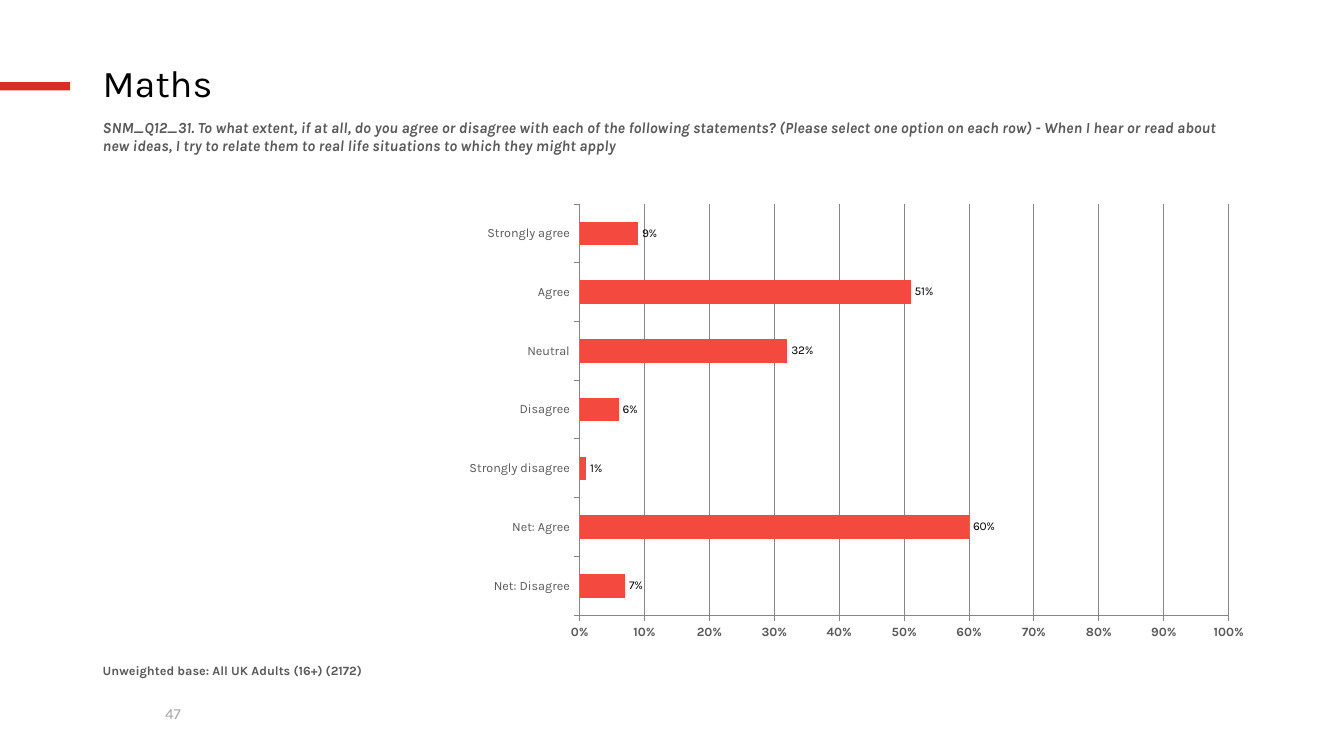
from dataclasses import dataclass

from lxml.etree import SubElement
from pptx import Presentation
from pptx.chart.data import CategoryChartData
from pptx.dml.color import RGBColor
from pptx.enum.chart import XL_CHART_TYPE, XL_LABEL_POSITION, XL_TICK_LABEL_POSITION, XL_TICK_MARK
from pptx.enum.shapes import MSO_SHAPE
from pptx.enum.text import MSO_ANCHOR
from pptx.oxml.ns import qn
from pptx.util import Cm, Pt


@dataclass(frozen=True)
class Theme:
    font: str = "Karla"
    black: str = "000000"
    grey: str = "595959"
    pale: str = "A6A6A6"
    grid: str = "868686"
    accent: str = "DA2C2D"
    bar: str = "F3493E"
    title: float = 27
    body: float = 11
    small: float = 9
    label: float = 8.5


THEME = Theme()
LEFT, WIDTH = 2.34, 29.21
ANSWERS = [
    ("Net: Disagree", 0.07),
    ("Net: Agree", 0.6),
    ("Strongly disagree", 0.01),
    ("Disagree", 0.06),
    ("Neutral", 0.32),
    ("Agree", 0.51),
    ("Strongly agree", 0.09),
]


def style_font(font, size, color, bold=False, italic=False):
    font.name = THEME.font
    font.size = Pt(size)
    font.bold = bold
    font.italic = italic
    font.color.rgb = RGBColor.from_string(color)


def add_text(s, text, x, y, w, h, size, color, bold=False, italic=False,
             anchor=MSO_ANCHOR.TOP, spacing=1.0):
    tf = s.shapes.add_textbox(Cm(x), Cm(y), Cm(w), Cm(h)).text_frame
    tf.word_wrap = True
    tf.vertical_anchor = anchor
    p = tf.paragraphs[0]
    p.text = text
    p.line_spacing = spacing
    style_font(p.font, size, color, bold, italic)


def add_accent_bar(s, x, y, w, h):
    sp = s.shapes.add_shape(MSO_SHAPE.RECTANGLE, Cm(x), Cm(y), Cm(w), Cm(h))
    sp.shadow.inherit = False
    sp.fill.solid()
    sp.fill.fore_color.rgb = RGBColor.from_string(THEME.accent)
    sp.line.fill.background()


def style_axis(axis, bold=False):
    axis.tick_label_position = XL_TICK_LABEL_POSITION.LOW
    axis.major_tick_mark = XL_TICK_MARK.OUTSIDE
    axis.minor_tick_mark = XL_TICK_MARK.NONE
    axis.format.line.color.rgb = RGBColor.from_string(THEME.grid)
    axis.format.line.width = Pt(0.75)
    style_font(axis.tick_labels.font, THEME.small, THEME.grey, bold)


def place_plot(chart, x, y, w, h):
    plot_area = chart.plots[0]._element.getparent()
    for old in plot_area.findall(qn("c:layout")):
        plot_area.remove(old)
    layout = SubElement(plot_area, qn("c:layout"))
    plot_area.insert(0, layout)
    manual = SubElement(layout, qn("c:manualLayout"))
    settings = [("layoutTarget", "inner"), ("xMode", "edge"), ("yMode", "edge"),
                ("x", x), ("y", y), ("w", w), ("h", h)]
    for name, value in settings:
        SubElement(manual, qn(f"c:{name}")).set("val", str(value))


def add_answer_chart(s, x, y, w, h):
    data = CategoryChartData(number_format="0%")
    data.categories = [answer for answer, _ in ANSWERS]
    data.add_series("Series 1", [share for _, share in ANSWERS])
    chart = s.shapes.add_chart(
        XL_CHART_TYPE.BAR_CLUSTERED, Cm(x), Cm(y), Cm(w), Cm(h), data).chart
    chart.has_legend = False
    chart.has_title = False
    style_font(chart.font, 18, THEME.black)

    style_axis(chart.category_axis)
    chart.category_axis.has_major_gridlines = False
    axis = chart.value_axis
    style_axis(axis, bold=True)
    axis.minimum_scale, axis.maximum_scale, axis.major_unit = 0, 1, 0.1
    axis.tick_labels.number_format = "0%"
    axis.tick_labels.number_format_is_linked = False
    axis.has_major_gridlines = True
    line = axis.major_gridlines.format.line
    line.color.rgb = RGBColor.from_string(THEME.grid)
    line.width = Pt(0.75)

    plot = chart.plots[0]
    plot.vary_by_categories = False
    plot.gap_width, plot.overlap = 150, -10
    series = plot.series[0]
    series.invert_if_negative = False
    series.format.fill.solid()
    series.format.fill.fore_color.rgb = RGBColor.from_string(THEME.bar)
    labels = series.data_labels
    labels.show_value = True
    labels.position = XL_LABEL_POSITION.OUTSIDE_END
    labels.number_format = "0%"
    labels.number_format_is_linked = False
    style_font(labels.font, THEME.label, THEME.black)
    place_plot(chart, 0.42, 0.03, 0.56, 0.9)


def main():
    prs = Presentation()
    prs.slide_width, prs.slide_height = Cm(33.87), Cm(19.05)
    s = prs.slides.add_slide(prs.slide_layouts[6])

    add_accent_bar(s, 0, 2.07, 1.77, 0.21)
    add_text(s, "47", 3.91, 17.63, 1.73, 0.74, THEME.body, THEME.pale)
    add_text(s, "Maths", LEFT, 1.5, WIDTH, 1.3, THEME.title, THEME.black,
             anchor=MSO_ANCHOR.MIDDLE, spacing=0.9)
    add_text(s, "SNM_Q12_31. To what extent, if at all, do you agree or disagree with each of "
             "the following statements? (Please select one option on each row) - When I hear or "
             "read about new ideas, I try to relate them to real life situations to which they "
             "might apply", LEFT, 2.84, WIDTH, 1.68, THEME.body, THEME.grey, bold=True, italic=True)
    add_text(s, "Unweighted base: All UK Adults (16+) (2172)", LEFT, 16.59, WIDTH, 1.09,
             THEME.small, THEME.grey, bold=True)
    add_answer_chart(s, LEFT, 4.8, WIDTH, 11.51)
    prs.save("out.pptx")


if __name__ == "__main__":
    main()
